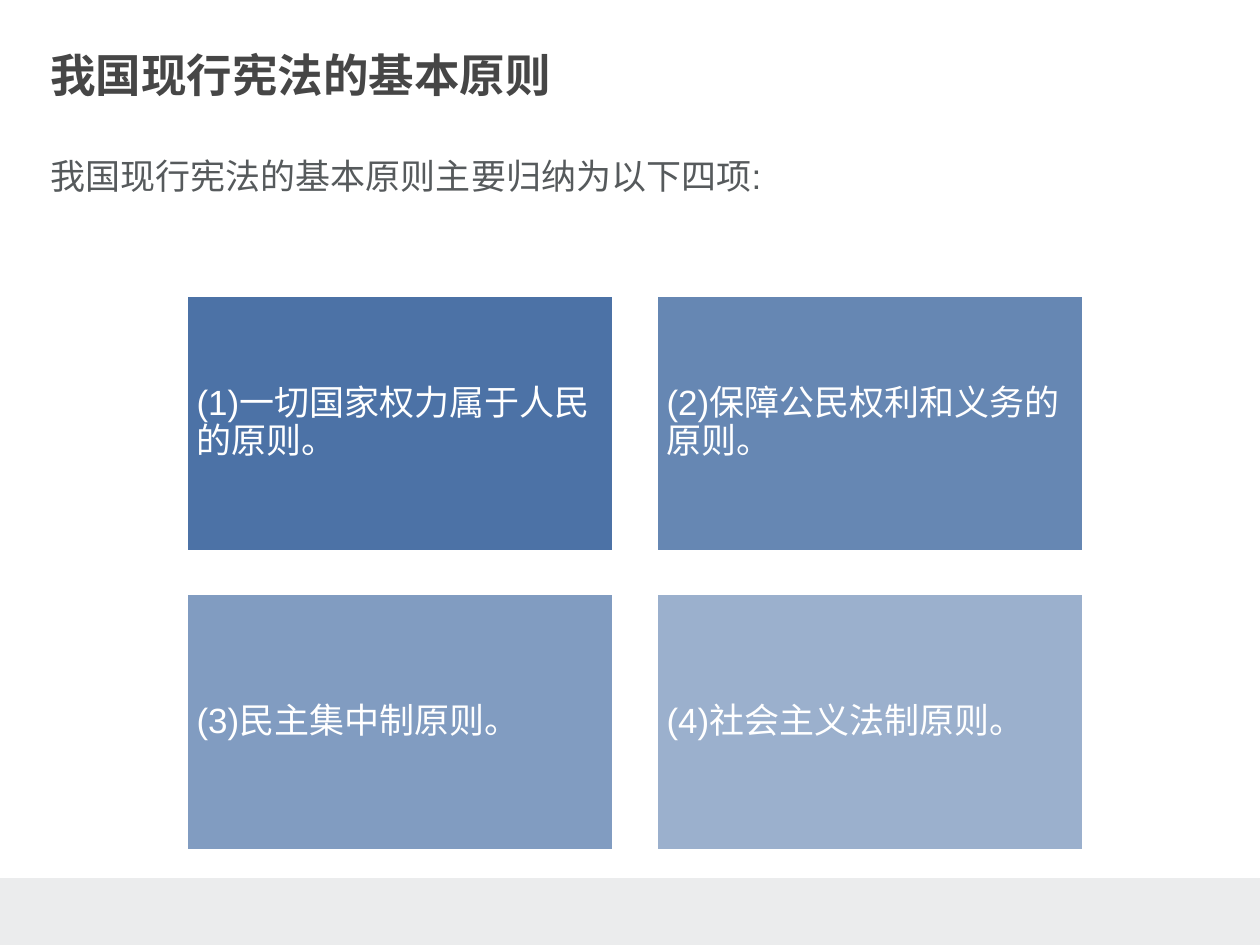
"""Builds a slide listing the four basic principles of the constitution."""
from dataclasses import dataclass

from lxml import etree
from pptx import Presentation
from pptx.dml.color import RGBColor
from pptx.enum.shapes import MSO_SHAPE
from pptx.enum.text import MSO_ANCHOR, PP_ALIGN
from pptx.oxml.ns import qn
from pptx.util import Inches, Pt

FONT = "Arial"
CARD_W, CARD_H, GAP = 3.39, 2.04, 0.33
GRID_LEFT, GRID_TOP, COLUMNS = 1.48, 2.34, 2


@dataclass
class Principle:
    text: str
    opacity: int


PRINCIPLES = [
    Principle("(1)一切国家权力属于人民的原则。", 90),
    Principle("(2)保障公民权利和义务的原则。", 77),
    Principle("(3)民主集中制原则。", 63),
    Principle("(4)社会主义法制原则。", 50),
]


def rgb(value: str) -> RGBColor:
    return RGBColor.from_string(value)


def write(sp, text: str, *, size: float, color: str, bold: bool = False,
          inset: float = 0, anchor=MSO_ANCHOR.TOP, spacing: float = 1.0) -> None:
    tf = sp.text_frame
    tf.word_wrap = True
    tf.vertical_anchor = anchor
    tf.margin_left = tf.margin_right = Inches(inset)
    tf.margin_top = tf.margin_bottom = Inches(inset)
    p = tf.paragraphs[0]
    p.alignment = PP_ALIGN.LEFT
    p.line_spacing = spacing
    r = p.add_run()
    r.text = text
    r.font.name, r.font.size, r.font.bold = FONT, Pt(size), bold
    r.font.color.rgb = rgb(color)


def add_text(s, text: str, top: float, height: float, **style) -> None:
    sp = s.shapes.add_textbox(Inches(0.4), Inches(top), Inches(9.2), Inches(height))
    write(sp, text, **style)


def add_rect(s, left: float, top: float, width: float, height: float,
             fill: str, opacity: int = 100):
    sp = s.shapes.add_shape(MSO_SHAPE.RECTANGLE, Inches(left), Inches(top),
                            Inches(width), Inches(height))
    sp.shadow.inherit = False
    sp.fill.solid()
    sp.fill.fore_color.rgb = rgb(fill)
    sp.line.fill.background()
    if opacity < 100:
        color = sp.fill._xPr.find(qn("a:solidFill"))[0]
        etree.SubElement(color, qn("a:alpha"), val=str(opacity * 1000))
    return sp


def add_principle(s, index: int, item: Principle) -> None:
    row, col = divmod(index, COLUMNS)
    sp = add_rect(s, GRID_LEFT + col * (CARD_W + GAP + 0.01),
                  GRID_TOP + row * (CARD_H + GAP),
                  CARD_W, CARD_H, "39639D", item.opacity)
    sp.line.color.rgb = rgb("FFFFFF")
    sp.line.width = Pt(2)
    write(sp, item.text, size=20, color="FFFFFF", inset=0.08,
          anchor=MSO_ANCHOR.MIDDLE, spacing=0.9)


def main() -> None:
    prs = Presentation()
    prs.slide_width, prs.slide_height = Inches(10), Inches(7.5)
    s = prs.slides.add_slide(prs.slide_layouts[6])
    add_rect(s, 0, 6.97, 10, 0.53, "EBECED")
    add_text(s, "我国现行宪法的基本原则", 0.37, 0.43,
             size=26, color="464646", bold=True)
    add_text(s, "我国现行宪法的基本原则主要归纳为以下四项:", 1.23, 0.4,
             size=20, color="565A5C")
    for index, item in enumerate(PRINCIPLES):
        add_principle(s, index, item)
    prs.save("out.pptx")


if __name__ == "__main__":
    main()
